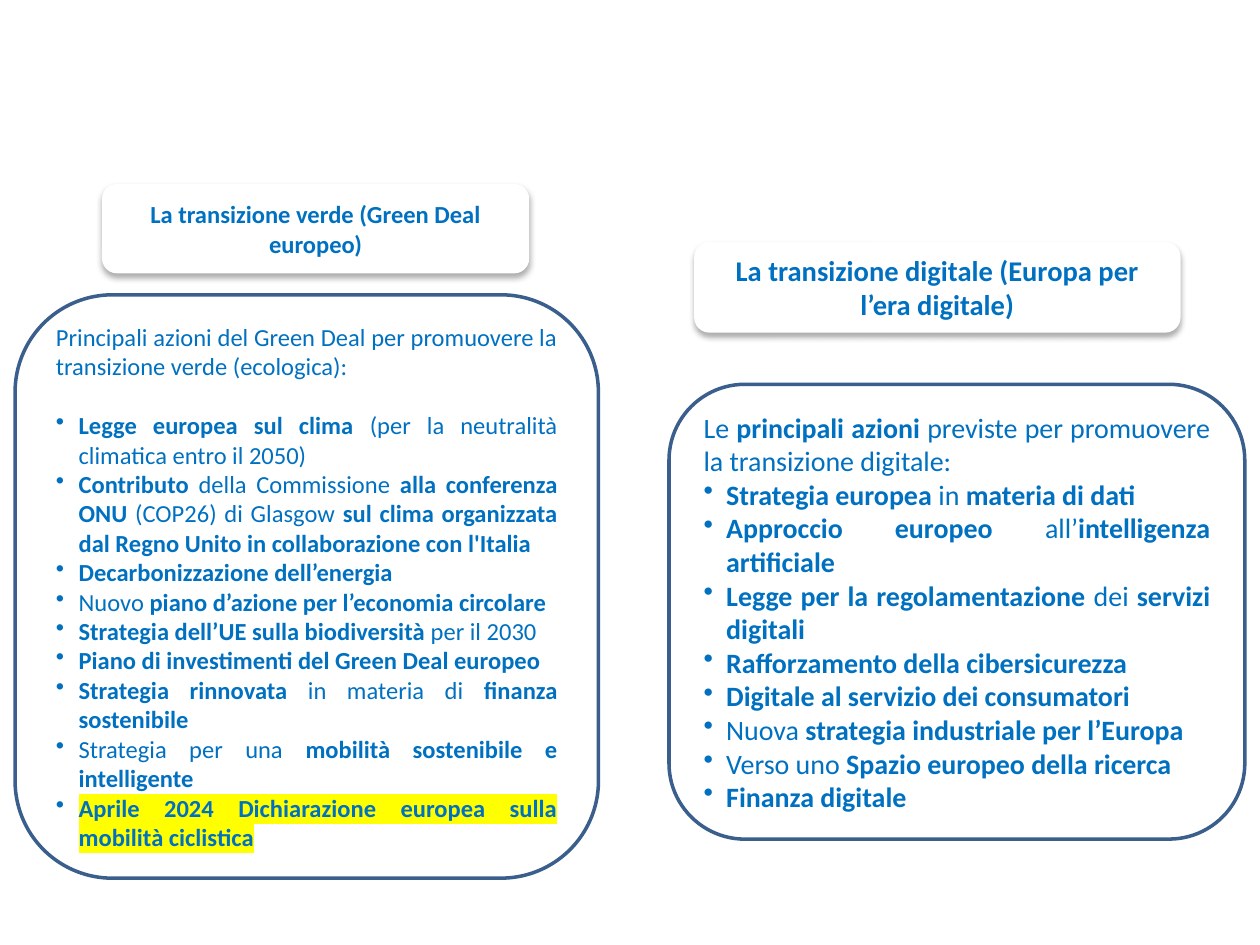
import pptx
import pptx.dml.color
import pptx.enum.shapes
import pptx.enum.text
import pptx.oxml
import pptx.oxml.ns
import pptx.util
from lxml import etree

Inches = pptx.util.Inches
Pt = pptx.util.Pt
RGBColor = pptx.dml.color.RGBColor
Alignment = pptx.enum.text.PP_ALIGN
qn = pptx.oxml.ns.qn

WHITE = RGBColor(0xFF, 0xFF, 0xFF)
BLUE = RGBColor(0x00, 0x70, 0xC0)
OUTLINE = RGBColor(0x3A, 0x5F, 0x8C)
YELLOW = RGBColor(0xFF, 0xFF, 0x00)
BLACK = RGBColor(0x00, 0x00, 0x00)
FONT = "Calibri"
BOLD_MARK = "**"
INDENT = Inches(0.18)

GREEN_INTRO = (
    "Principali azioni del Green Deal per promuovere la transizione verde (ecologica):"
)
GREEN_ACTIONS = [
    "**Legge europea sul clima **(per la neutralità climatica entro il 2050)",
    "**Contributo** della Commissione **alla conferenza ONU **(COP26) di Glasgow "
    "**sul clima organizzata dal Regno Unito in collaborazione con l'Italia**",
    "**Decarbonizzazione dell’energia**",
    "Nuovo **piano d’azione per l’economia circolare**",
    "**Strategia dell’UE sulla biodiversità **per il 2030",
    "**Piano di investimenti del Green Deal europeo**",
    "**Strategia rinnovata** in materia di **finanza sostenibile**",
    "Strategia per una **mobilità sostenibile e intelligente**",
]
GREEN_HIGHLIGHT = "**Aprile 2024 Dichiarazione europea sulla mobilità ciclistica**"
DIGITAL_INTRO = (
    "Le **principali azioni** previste per promuovere la transizione digitale:"
)
DIGITAL_ACTIONS = [
    "**Strategia europea** in **materia di dati**",
    "**Approccio europeo **all’**intelligenza artificiale**",
    "**Legge per la regolamentazione** dei **servizi digitali**",
    "**Rafforzamento della cibersicurezza**",
    "**Digitale al servizio dei consumatori**",
    "Nuova **strategia industriale per l’Europa**",
    "Verso uno **Spazio europeo della ricerca**",
    "**Finanza digitale**",
]


def add_rounded_box(slide, left, top, width, height):
    shape = slide.shapes.add_shape(
        pptx.enum.shapes.MSO_SHAPE.ROUNDED_RECTANGLE,
        Inches(left), Inches(top), Inches(width), Inches(height),
    )
    shape.shadow.inherit = False
    shape.fill.solid()
    shape.fill.fore_color.rgb = WHITE
    shape.text_frame.word_wrap = True
    shape.text_frame.vertical_anchor = pptx.enum.text.MSO_ANCHOR.MIDDLE
    return shape


def add_drop_shadow(shape):
    effects = shape._element.spPr.find(qn("a:effectLst"))
    shadow = etree.SubElement(
        effects, qn("a:outerShdw"),
        blurRad=str(Pt(3.5)), dist=str(Pt(2.2)), dir="5400000", rotWithShape="0",
    )
    color = etree.SubElement(shadow, qn("a:srgbClr"), val=str(BLACK))
    etree.SubElement(color, qn("a:alpha"), val="32000")


def add_runs(paragraph, text, size):
    for index, part in enumerate(text.split(BOLD_MARK)):
        if part:
            run = paragraph.add_run()
            run.text = part
            run.font.name = FONT
            run.font.size = Pt(size)
            run.font.bold = index % 2 == 1
            run.font.color.rgb = BLUE


def add_bullet(paragraph):
    properties = paragraph._p.get_or_add_pPr()
    properties.set("marL", str(INDENT))
    properties.set("indent", str(-INDENT))
    etree.SubElement(properties, qn("a:buChar"), char="•")


def highlight(paragraph):
    for run in paragraph.runs:
        mark = pptx.oxml.parse_xml(
            f'<a:highlight {pptx.oxml.ns.nsdecls("a")}>'
            f'<a:srgbClr val="{YELLOW}"/></a:highlight>'
        )
        run.font._element.find(qn("a:solidFill")).addnext(mark)


def add_heading(slide, box, text, size):
    shape = add_rounded_box(slide, *box)
    shape.line.fill.background()
    add_drop_shadow(shape)
    paragraph = shape.text_frame.paragraphs[0]
    paragraph.alignment = Alignment.CENTER
    add_runs(paragraph, BOLD_MARK + text, size)


def add_panel(slide, box, intro, actions, size, gap=0):
    shape = add_rounded_box(slide, *box)
    shape.line.color.rgb = OUTLINE
    shape.line.width = Pt(2)
    paragraph = shape.text_frame.paragraphs[0]
    paragraph.alignment = Alignment.JUSTIFY
    paragraph.space_after = Pt(gap)
    add_runs(paragraph, intro, size)
    for action in actions:
        paragraph = shape.text_frame.add_paragraph()
        paragraph.alignment = Alignment.JUSTIFY
        add_bullet(paragraph)
        add_runs(paragraph, action, size)
    return shape


def main():
    presentation = pptx.Presentation()
    presentation.slide_width = Inches(10)
    presentation.slide_height = Inches(7.5)
    slide = presentation.slides.add_slide(presentation.slide_layouts[6])

    green_panel = add_panel(
        slide, (0.12, 2.34, 4.63, 4.63), GREEN_INTRO,
        GREEN_ACTIONS + [GREEN_HIGHLIGHT], 14, gap=17,
    )
    highlight(green_panel.text_frame.paragraphs[-1])
    add_heading(
        slide, (0.81, 1.46, 3.39, 0.71),
        "La transizione verde (Green Deal europeo)", 14,
    )
    add_panel(slide, (5.31, 3.05, 4.57, 3.61), DIGITAL_INTRO, DIGITAL_ACTIONS, 16)
    add_heading(
        slide, (5.51, 1.92, 3.86, 0.72),
        "La transizione digitale (Europa per l’era digitale)", 16.3,
    )
    presentation.save("out.pptx")


if __name__ == "__main__":
    main()
